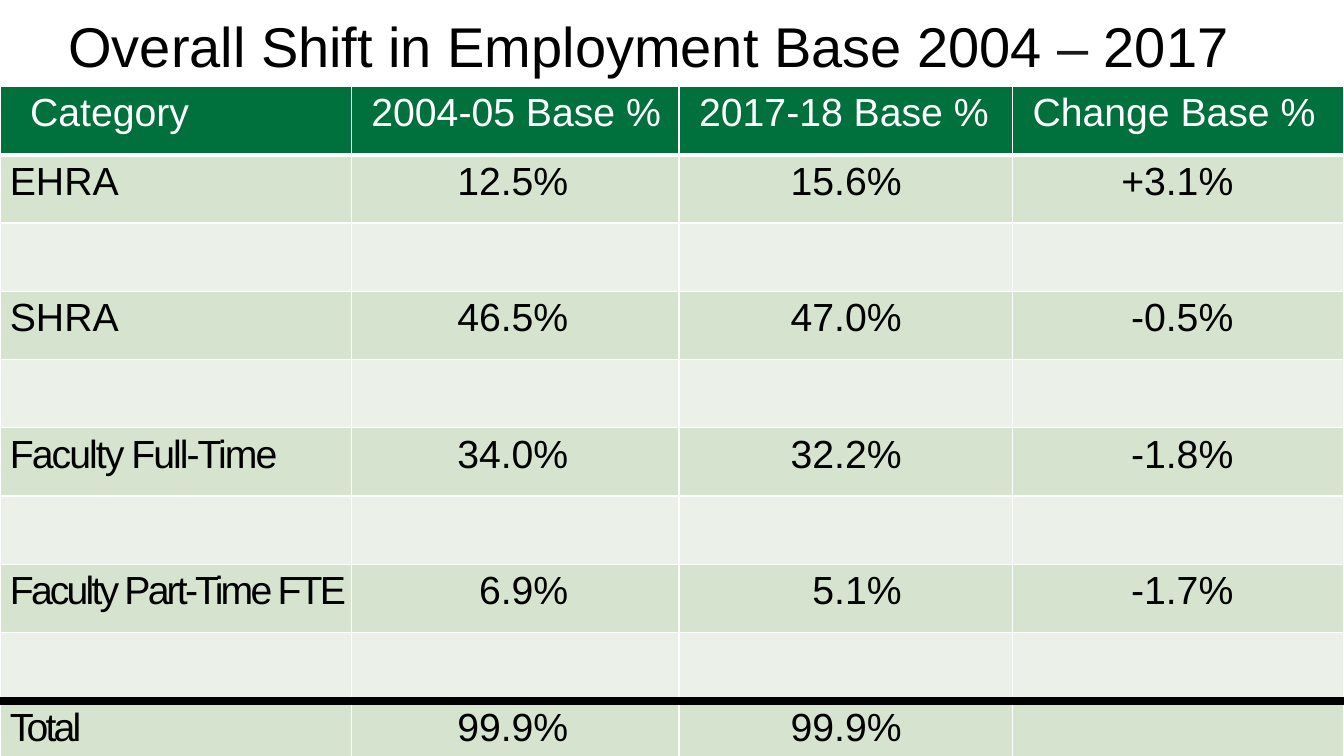
from dataclasses import dataclass

from lxml import etree
from pptx import Presentation
from pptx.dml.color import RGBColor
from pptx.enum.text import MSO_ANCHOR, PP_ALIGN
from pptx.oxml.ns import qn
from pptx.table import _Cell
from pptx.util import Cm, Pt

LEFT, RIGHT = PP_ALIGN.LEFT, PP_ALIGN.RIGHT
MIDDLE = MSO_ANCHOR.MIDDLE
TITLE_ONLY = 5


@dataclass(frozen=True)
class Theme:
    font: str = "Arial"
    title_size: float = 40
    table_size: float = 28
    text: str = "000000"
    dash: str = "1A1A1A"
    header_text: str = "FFFFFF"
    header_fill: str = "00703C"
    dark_band: str = "D5E3CF"
    light_band: str = "EBF1E9"
    grid: str = "FFFFFF"
    total_rule: str = "000000"


@dataclass(frozen=True)
class Border:
    color: str
    width: float


@dataclass(frozen=True)
class Category:
    name: str
    shares: tuple[str, str, str]
    spacing: float = 0


THEME = Theme()
GRID = Border(THEME.grid, 1)
HEADER_RULE = Border(THEME.grid, 3)
TOTAL_RULE = Border(THEME.total_rule, 6)

HEADINGS = ("Category", "2004-05 Base %", "2017-18 Base %", "Change Base %")
CATEGORIES = (
    Category("EHRA", ("12.5%", "15.6%", "+3.1%")),
    Category("SHRA", ("46.5%", "47.0%", "-0.5%")),
    Category("Faculty Full-Time", ("34.0%", "32.2%", "-1.8%"), -1.4),
    Category("Faculty Part-Time FTE", ("6.9%", "5.1%", "-1.7%"), -2),
    Category("Total", ("99.9%", "99.9%", ""), -2),
)
COLUMN_WIDTHS = (8.85, 8.26, 8.4, 8.36)
ROW_HEIGHT, TOTAL_HEIGHT = 1.72, 1.4


def set_border(cell: _Cell, top: Border, bottom: Border) -> None:
    """Edge lines precede the fill inside the cell properties."""
    properties = cell._tc.get_or_add_tcPr()
    edges = {"a:lnL": GRID, "a:lnR": GRID, "a:lnT": top, "a:lnB": bottom}
    for position, (tag, border) in enumerate(edges.items()):
        line = etree.Element(qn(tag), w=str(Pt(border.width)))
        fill = etree.SubElement(line, qn("a:solidFill"))
        etree.SubElement(fill, qn("a:srgbClr"), val=border.color)
        properties.insert(position, line)


def write_cell(cell: _Cell, text: str, color: str, margins: tuple[float, float],
               align: PP_ALIGN = LEFT, spacing: float = 0) -> None:
    cell.margin_left, cell.margin_right = (Cm(margin) for margin in margins)
    paragraph = cell.text_frame.paragraphs[0]
    paragraph.alignment = align
    font = paragraph.font
    font.name, font.size, font.bold = THEME.font, Pt(THEME.table_size), False
    font.color.rgb = RGBColor.from_string(color)
    if text:
        run = paragraph.add_run()
        run.text = text
        if spacing:
            run._r.get_or_add_rPr().set("spc", str(round(spacing * 100)))


def main() -> None:
    presentation = Presentation()
    presentation.slide_width, presentation.slide_height = Cm(33.87), Cm(19.05)
    slide = presentation.slides.add_slide(presentation.slide_layouts[TITLE_ONLY])

    # Title
    title = slide.shapes.title
    title.left, title.top, title.width, title.height = Cm(1.47), Cm(0), Cm(30.91), Cm(2.49)
    title.text_frame.vertical_anchor = MIDDLE
    heading = title.text_frame.paragraphs[0]
    heading.alignment, heading.line_spacing = LEFT, 0.9
    heading.font.name, heading.font.size = THEME.font, Pt(THEME.title_size)
    for text, color in (("Overall Shift in Employment Base 2004 ", THEME.text),
                        ("– ", THEME.dash), ("2017", THEME.text)):
        run = heading.add_run()
        run.text = text
        run.font.color.rgb = RGBColor.from_string(color)

    # Table grid: a heading, then each category with a blank row between
    row_count = 2 * len(CATEGORIES)
    total_row = row_count - 1
    table = slide.shapes.add_table(
        row_count, len(HEADINGS), Cm(0), Cm(2.18), Cm(sum(COLUMN_WIDTHS)),
        Cm(total_row * ROW_HEIGHT + TOTAL_HEIGHT)).table
    for column, width in zip(table.columns, COLUMN_WIDTHS):
        column.width = Cm(width)
    for index, row in enumerate(table.rows):
        row.height = Cm(TOTAL_HEIGHT if index == total_row else ROW_HEIGHT)
        band = THEME.dark_band if index % 2 else THEME.light_band
        fill_color = band if index else THEME.header_fill
        top = {1: HEADER_RULE, total_row: TOTAL_RULE}.get(index, GRID)
        bottom = {0: HEADER_RULE, total_row - 1: TOTAL_RULE}.get(index, GRID)
        for cell in row.cells:
            cell.fill.solid()
            cell.fill.fore_color.rgb = RGBColor.from_string(fill_color)
            set_border(cell, top, bottom)

    # Headings
    for column, label in enumerate(HEADINGS):
        write_cell(table.cell(0, column), label, THEME.header_text,
                   (0.51 if column else 0.76, 0.25))

    # Categories and their shares
    for index, category in enumerate(CATEGORIES):
        row = 2 * index + 1
        write_cell(table.cell(row, 0), category.name, THEME.text,
                   (0.25, 0), spacing=category.spacing)
        for column, share in enumerate(category.shares, start=1):
            write_cell(table.cell(row, column), share, THEME.text, (0.51, 2.79), RIGHT)

    presentation.save("out.pptx")


if __name__ == "__main__":
    main()
